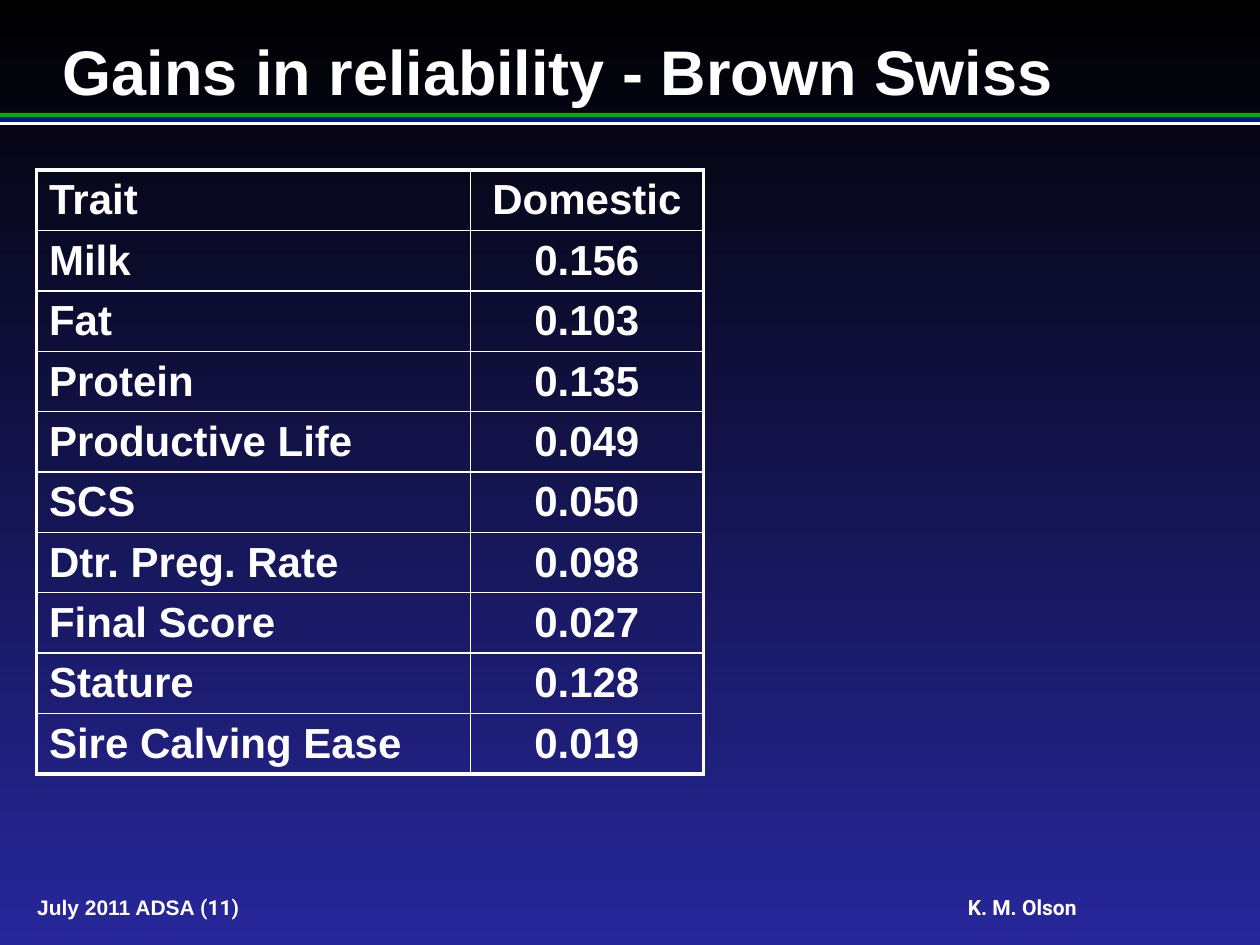
from lxml.etree import SubElement
from pptx import Presentation
from pptx.dml.color import RGBColor
from pptx.enum.shapes import MSO_SHAPE as Shape
from pptx.enum.text import MSO_ANCHOR as Anchor, PP_ALIGN as Align
from pptx.oxml.ns import qn
from pptx.util import Cm, Pt

COLORS = {
    "black": "000000",
    "indigo": "27279B",
    "green": "01AF00",
    "blue": "001799",
    "white": "FFFFFF",
}
GAINS = [
    ("Trait", "Domestic"),
    ("Milk", "0.156"),
    ("Fat", "0.103"),
    ("Protein", "0.135"),
    ("Productive Life", "0.049"),
    ("SCS", "0.050"),
    ("Dtr. Preg. Rate", "0.098"),
    ("Final Score", "0.027"),
    ("Stature", "0.128"),
    ("Sire Calving Ease", "0.019"),
]
SLIDE_WIDTH, SLIDE_HEIGHT = 25.4, 19.05
OUTER_LINE, INNER_LINE = 2.25, 1


def color(name):
    return RGBColor.from_string(COLORS[name])


class SlideBuilder:
    """Holds the deck style and the slide being filled; lengths are in cm."""

    font_name = "Arial"
    text_color = "white"

    def __init__(self, slide):
        self.slide = slide

    def background(self, top, bottom):
        fill = self.slide.background.fill
        fill.gradient()
        fill.gradient_angle = 270
        for stop, name, position in zip(fill.gradient_stops, (top, bottom), (0, 1)):
            stop.color.rgb = color(name)
            stop.position = position

    def band(self, top, height, fill):
        shape = self.slide.shapes.add_shape(
            Shape.RECTANGLE, 0, Cm(top), Cm(SLIDE_WIDTH), Cm(height))
        shape.shadow.inherit = False
        shape.fill.solid()
        shape.fill.fore_color.rgb = color(fill)
        shape.line.fill.background()

    def style_font(self, font, size):
        font.name = self.font_name
        font.size = Pt(size)
        font.bold = True
        font.color.rgb = color(self.text_color)

    def text(self, left, top, width, height, content, size, anchor=Anchor.TOP):
        """Add a text box without insets and return its paragraph."""
        box = self.slide.shapes.add_textbox(Cm(left), Cm(top), Cm(width), Cm(height))
        frame = box.text_frame
        frame.word_wrap = True
        frame.vertical_anchor = anchor
        frame.margin_left = frame.margin_right = 0
        frame.margin_top = frame.margin_bottom = 0
        paragraph = frame.paragraphs[0]
        paragraph.add_run().text = content
        self.style_font(paragraph.font, size)
        return paragraph

    def footer(self, occasion, number, author, author_offset):
        """Add one line with the author at a tab stop."""
        paragraph = self.text(0.75, 18.03, 24, 0.51, occasion, 12, Anchor.MIDDLE)
        run = paragraph.add_run()
        run.text = f"{number}\t{author}"
        run.font.name = "Roboto"
        properties = paragraph._p.get_or_add_pPr()
        tabs = properties.makeelement(qn("a:tabLst"))
        properties.find(qn("a:defRPr")).addprevious(tabs)
        SubElement(tabs, qn("a:tab"), pos=str(Cm(author_offset)), algn="l")

    def cell_borders(self, cell, widths):
        """Draw the sides given as a dict of L, R, T, B to points."""
        properties = cell._tc.get_or_add_tcPr()
        for side, width in widths.items():
            line = SubElement(properties, qn(f"a:ln{side}"), w=str(Pt(width)))
            fill = SubElement(line, qn("a:solidFill"))
            SubElement(fill, qn("a:srgbClr"), val=COLORS["white"])

    def table(self, left, top, column_widths, row_height, rows, size):
        last_row, last_column = len(rows) - 1, len(column_widths) - 1
        table = self.slide.shapes.add_table(
            len(rows), len(column_widths), Cm(left), Cm(top),
            Cm(sum(column_widths)), Cm(row_height * len(rows))).table
        table.first_row = table.horz_banding = False
        for column, width in zip(table.columns, column_widths):
            column.width = Cm(width)
        for row_index, values in enumerate(rows):
            table.rows[row_index].height = Cm(row_height)
            for column_index, value in enumerate(values):
                cell = table.cell(row_index, column_index)
                outer_sides = {
                    "L": column_index == 0,
                    "R": column_index == last_column,
                    "T": row_index == 0,
                    "B": row_index == last_row,
                }
                self.cell_borders(cell, {
                    side: OUTER_LINE if outer else INNER_LINE
                    for side, outer in outer_sides.items()})
                cell.fill.background()
                cell.vertical_anchor = Anchor.MIDDLE
                cell.margin_left = cell.margin_right = Cm(0.25)
                cell.margin_top = cell.margin_bottom = Cm(0.1)
                cell.text = value
                paragraph = cell.text_frame.paragraphs[0]
                paragraph.alignment = Align.CENTER if column_index else Align.LEFT
                self.style_font(paragraph.font, size)


def main():
    presentation = Presentation()
    presentation.slide_width = Cm(SLIDE_WIDTH)
    presentation.slide_height = Cm(SLIDE_HEIGHT)
    builder = SlideBuilder(presentation.slides.add_slide(presentation.slide_layouts[6]))

    builder.background("black", "indigo")
    builder.band(2.28, 0.09, "green")
    builder.band(2.44, 0.08, "white")
    builder.band(2.37, 0.09, "blue")
    builder.footer("July 2011 ADSA ", "(11)", "K. M. Olson", 18.76)
    builder.text(1.27, 0.65, 22.86, 1.52, "Gains in reliability - Brown Swiss", 36)
    builder.table(0.74, 3.43, (8.74, 4.7), 1.2, GAINS, 24)

    presentation.save("out.pptx")


if __name__ == "__main__":
    main()
